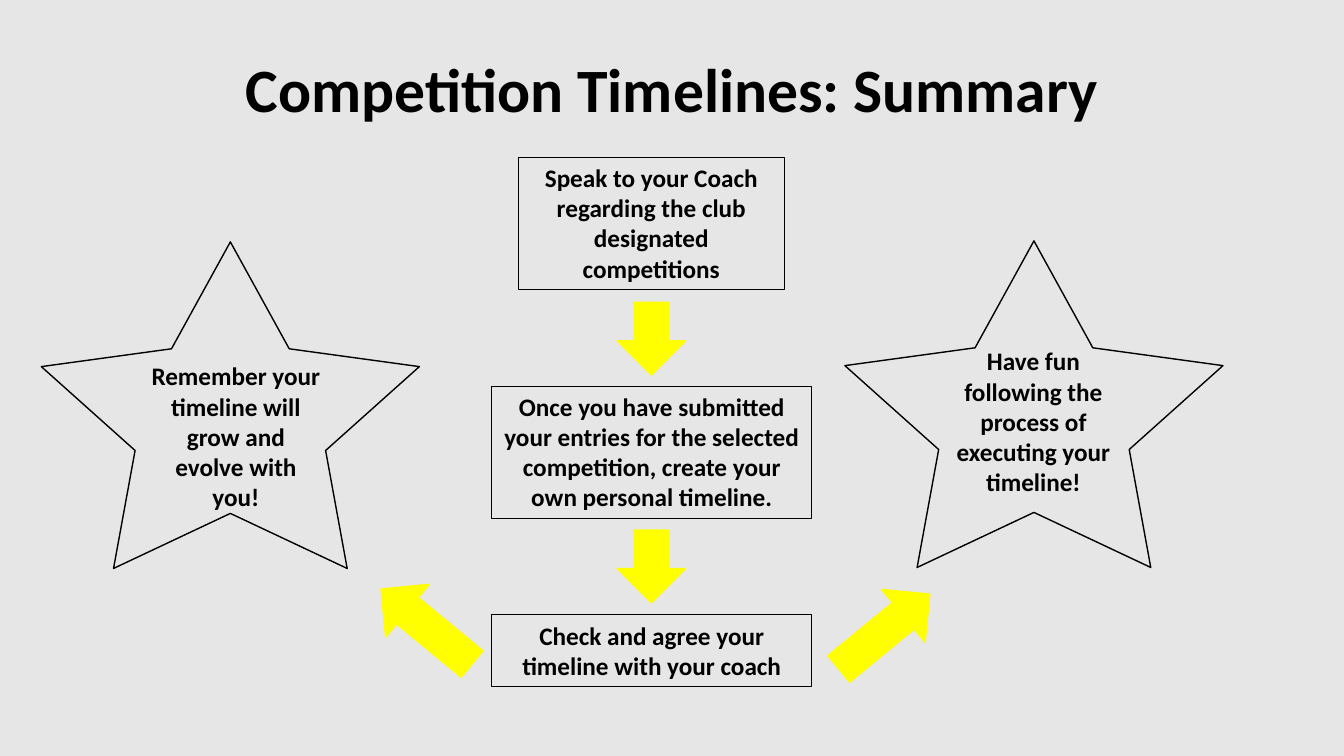
from pptx import Presentation
from pptx.dml.color import RGBColor
from pptx.enum.shapes import MSO_SHAPE
from pptx.enum.text import MSO_ANCHOR, MSO_AUTO_SIZE, PP_ALIGN
from pptx.util import Inches, Pt


def color(value):
    return RGBColor.from_string(value)


def add_text(sp, text, size, anchor=MSO_ANCHOR.TOP):
    tf = sp.text_frame
    tf.word_wrap = True
    tf.vertical_anchor = anchor
    p = tf.paragraphs[0]
    p.alignment = PP_ALIGN.CENTER
    r = p.add_run()
    r.text = text
    r.font.name = "Calibri"
    r.font.size = Pt(size)
    r.font.bold = True
    r.font.color.rgb = color("000000")
    return tf


prs = Presentation()
prs.slide_width = Inches(13.33)
prs.slide_height = Inches(7.5)
s = prs.slides.add_slide(prs.slide_layouts[5])
s.background.fill.solid()
s.background.fill.fore_color.rgb = color("E7E6E6")

title = s.shapes.title
title.left, title.top = Inches(0.92), Inches(0.4)
title.width, title.height = Inches(11.5), Inches(1.03)
tf = add_text(title, "Competition Timelines: Summary", 44, MSO_ANCHOR.MIDDLE)
tf.paragraphs[0].line_spacing = 0.9

steps = [
    (5.14, 1.56, 2.64, 1.31, "Speak to your Coach regarding the club designated competitions"),
    (4.88, 3.83, 3.17, 1.31, "Once you have submitted your entries for the selected competition, "
                             "create your own personal timeline."),
    (4.88, 6.1, 3.17, 0.71, "Check and agree your timeline with your coach"),
]
for x, y, w, h, text in steps:
    sp = s.shapes.add_shape(MSO_SHAPE.RECTANGLE, Inches(x), Inches(y), Inches(w), Inches(h))
    sp.shadow.inherit = False
    sp.fill.background()
    sp.line.color.rgb = color("000000")
    sp.line.width = Pt(0.75)
    add_text(sp, text, 18).auto_size = MSO_AUTO_SIZE.SHAPE_TO_FIT_TEXT

arrows = [
    (6.12, 3, 0.72, 0),
    (6.12, 5.26, 0.72, 0),
    (8.43, 5.68, 1.17, 230.6),
    (3.89, 5.63, 1.17, 129.5),
]
for x, y, h, angle in arrows:
    sp = s.shapes.add_shape(MSO_SHAPE.DOWN_ARROW, Inches(x), Inches(y), Inches(0.68), Inches(h))
    sp.rotation = angle
    sp.shadow.inherit = False
    sp.fill.solid()
    sp.fill.fore_color.rgb = color("FFFF00")
    sp.line.color.rgb = color("FFFF00")
    sp.line.width = Pt(1)

stars = [
    (0.41, 2.4, 1.39, 3.53, 1.9, 1.31, "Remember your timeline will grow and evolve with you!"),
    (8.38, 2.39, 9.31, 3.38, 1.88, 1.62, "Have fun following the process of executing your timeline!"),
]
for x, y, text_x, text_y, text_w, text_h, text in stars:
    sp = s.shapes.add_shape(MSO_SHAPE.STAR_5_POINT, Inches(x), Inches(y), Inches(3.75), Inches(3.24))
    sp.adjustments[0] = 0.252
    sp.shadow.inherit = False
    sp.fill.background()
    sp.line.color.rgb = color("000000")
    sp.line.width = Pt(1)
    label = s.shapes.add_textbox(Inches(text_x), Inches(text_y), Inches(text_w), Inches(text_h))
    add_text(label, text, 18).auto_size = MSO_AUTO_SIZE.SHAPE_TO_FIT_TEXT

prs.save("out.pptx")
